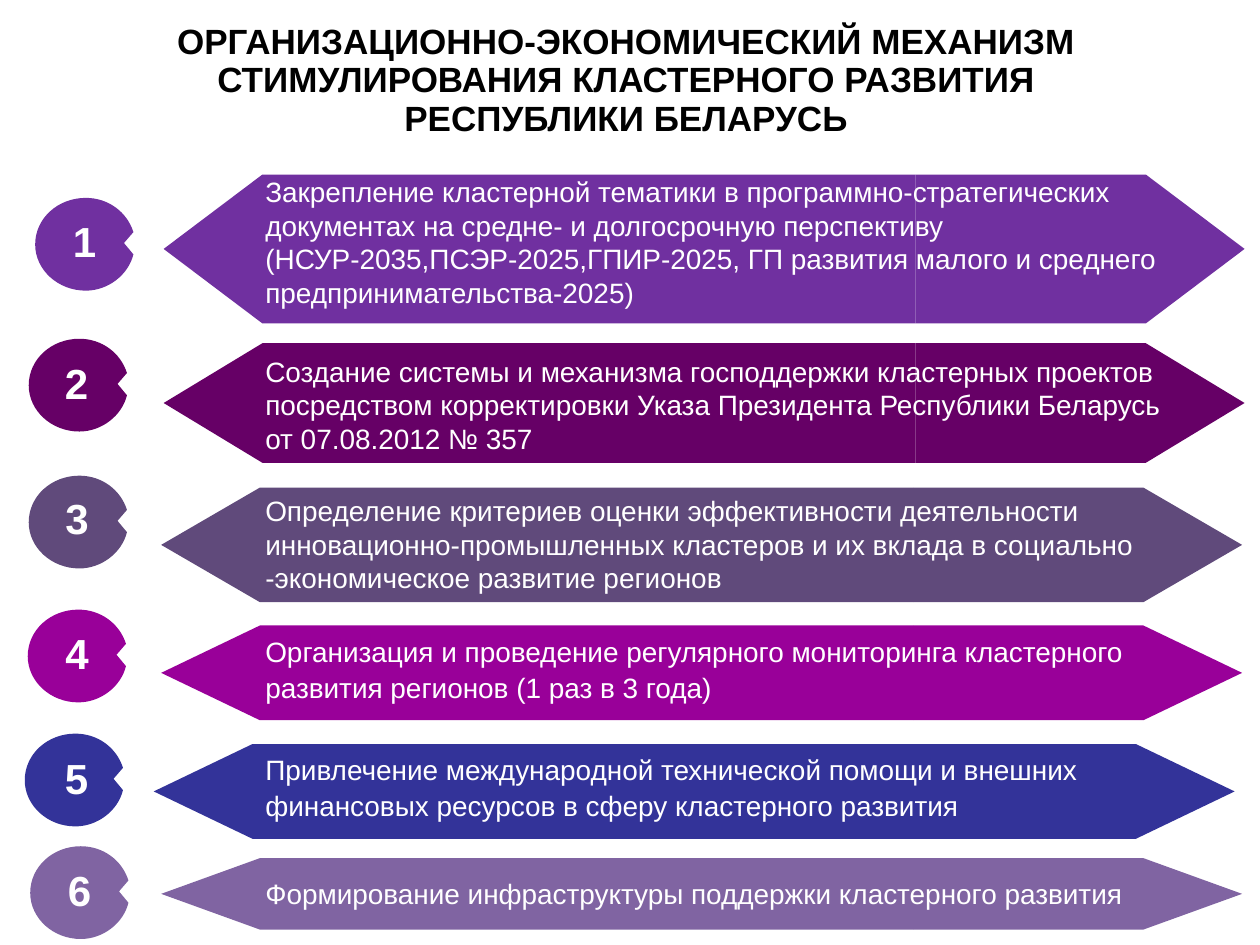
from dataclasses import dataclass

from lxml.etree import SubElement
from pptx import Presentation
from pptx.dml.color import RGBColor
from pptx.enum.text import MSO_ANCHOR, MSO_AUTO_SIZE, PP_ALIGN
from pptx.oxml.ns import qn
from pptx.shapes.autoshape import Shape
from pptx.shapes.shapetree import GroupShapes, SlideShapes
from pptx.slide import Slide
from pptx.text.text import TextFrame
from pptx.util import Cm, Pt

Point = tuple[float, float]


@dataclass(frozen=True)
class Theme:
    """Colours, font and type sizes of the slide."""

    font: str = "Arial"
    ink: str = "000000"
    paper: str = "FFFFFF"
    title_size: int = 20
    measure_size: int = 16
    number_size: int = 24
    title_leading: int = 22


@dataclass(frozen=True)
class Box:
    """A rectangle in centimetres."""

    left: float
    top: float
    width: float
    height: float


@dataclass(frozen=True)
class Measure:
    """One numbered measure: wording, colour and positions in centimetres."""

    wording: str
    colour: str
    band: Box
    wording_box: Box
    badge: Point
    number: Point
    spaced: bool = False


THEME = Theme()
BAND_WIDTH = 21.79
SEAM = 15.16
TIP = 1.99
WORDING_LEFT = 5.1
BADGE_START: Point = (1.98, 0.69)
BADGE_NOTCH: Point = (1.79, 0.91)
BADGE_CURVES: tuple[tuple[Point, Point, Point], ...] = (
    ((1.85, 0.28), (1.47, 0), (1.02, 0)),
    ((0.46, 0), (0, 0.41), (0, 0.94)),
    ((0, 1.45), (0.46, 1.87), (1.02, 1.87)),
    ((1.47, 1.87), (1.88, 1.55), (1.98, 1.14)),
    (BADGE_NOTCH, BADGE_NOTCH, BADGE_NOTCH),
)

TITLE = (
    "ОРГАНИЗАЦИОННО-ЭКОНОМИЧЕСКИЙ МЕХАНИЗМ СТИМУЛИРОВАНИЯ КЛАСТЕРНОГО РАЗВИТИЯ",
    "РЕСПУБЛИКИ БЕЛАРУСЬ",
)
MEASURES = (
    Measure(
        "Закрепление кластерной тематики в программно-стратегических документах на средне- и "
        "долгосрочную перспективу (НСУР-2035,ПСЭР-2025,ГПИР-2025, ГП развития малого и среднего "
        "предпринимательства-2025)",
        "7030A0", Box(3.3, 3.52, BAND_WIDTH, 3), Box(WORDING_LEFT, 3.4, 18.59, 3), (0.71, 3.99), (1.22, 4.22),
    ),
    Measure(
        "Создание системы и механизма господдержки кластерных проектов посредством корректировки "
        "Указа Президента Республики Беларусь от 07.08.2012 № 357",
        "660066", Box(3.3, 6.92, BAND_WIDTH, 2.41), Box(WORDING_LEFT, 7.02, 18.95, 3.07), (0.58, 6.83), (1.06, 7.09),
    ),
    Measure(
        "Определение критериев оценки эффективности деятельности инновационно-промышленных "
        "кластеров и их вклада в социально -экономическое развитие регионов",
        "604A7B", Box(3.25, 9.83, BAND_WIDTH, 2.31), Box(WORDING_LEFT, 9.83, 19.38, 2.31), (0.58, 9.59), (1.07, 9.8),
    ),
    Measure(
        "Организация и проведение регулярного мониторинга кластерного развития регионов (1 раз в 3 года)",
        "990099", Box(3.25, 12.61, BAND_WIDTH, 1.91), Box(WORDING_LEFT, 12.63, 19.38, 1.68), (0.56, 12.29),
        (1.07, 12.52), spaced=True,
    ),
    Measure(
        "Привлечение международной технической помощи и внешних финансовых ресурсов в сферу "
        "кластерного развития",
        "333399", Box(3.1, 15, BAND_WIDTH, 1.91), Box(WORDING_LEFT, 15, 19.38, 1.68), (0.5, 14.79),
        (1.06, 15.04), spaced=True,
    ),
    Measure(
        "Формирование инфраструктуры поддержки кластерного развития",
        "8064A2", Box(3.25, 17.3, BAND_WIDTH, 1.44), Box(WORDING_LEFT, 17.55, 18.95, 0.94), (0.61, 17.06), (1.12, 17.31),
    ),
)


def draw_outline(shapes: SlideShapes | GroupShapes, points: list[Point], colour: str) -> Shape:
    """Draw a closed, filled outline through points given in centimetres."""
    corners = [(Cm(x), Cm(y)) for x, y in points]
    builder = shapes.build_freeform(*corners[0])
    builder.add_line_segments([*corners[1:], corners[0]], close=True)
    outline = builder.convert_to_shape()
    outline.fill.solid()
    outline.fill.fore_color.rgb = RGBColor.from_string(colour)
    outline.line.fill.background()
    outline.shadow.inherit = False
    return outline


def draw_band(slide: Slide, measure: Measure) -> None:
    """Draw a double-headed band as two grouped halves that meet at the seam."""
    band = measure.band
    halves = slide.shapes.add_group_shape().shapes
    bottom, middle = band.top + band.height, band.top + band.height / 2
    seam, right = band.left + SEAM, band.left + band.width
    for tip, shoulder in ((band.left, band.left + TIP), (right, right - TIP)):
        points = [(shoulder, band.top), (tip, middle), (shoulder, bottom), (seam, bottom), (seam, band.top)]
        draw_outline(halves, points, measure.colour)


def draw_badge(slide: Slide, measure: Measure) -> None:
    """Draw a round badge with a notch, bending its sides into cubic curves."""
    left, top = measure.badge
    ends = [BADGE_START, *(curve[-1] for curve in BADGE_CURVES)]
    badge = draw_outline(slide.shapes, [(left + x, top + y) for x, y in ends], measure.colour)
    sides = list(badge.element.iter(qn("a:lnTo")))
    for side, curve in zip(sides, BADGE_CURVES):
        bend = side.getparent().makeelement(qn("a:cubicBezTo"))
        for x, y in curve:
            SubElement(bend, qn("a:pt"), x=str(int(Cm(x))), y=str(int(Cm(y))))
        side.getparent().replace(side, bend)


def write(
    slide: Slide, box: Box, lines: tuple[str, ...], size: int, colour: str, bold: bool = False
) -> TextFrame:
    """Write lines in a wrapping text box and return its text frame."""
    frame = slide.shapes.add_textbox(Cm(box.left), Cm(box.top), Cm(box.width), Cm(box.height)).text_frame
    frame.word_wrap = True
    frame.auto_size = MSO_AUTO_SIZE.SHAPE_TO_FIT_TEXT
    frame.text = "\n".join(lines)
    for paragraph in frame.paragraphs:
        paragraph.font.name = THEME.font
        paragraph.font.size = Pt(size)
        paragraph.font.bold = bold
        paragraph.font.color.rgb = RGBColor.from_string(colour)
    return frame


def write_title(slide: Slide) -> None:
    """Write the centred heading."""
    title = write(slide, Box(1.19, 0.31, 22.86, 2.62), TITLE, THEME.title_size, THEME.ink, bold=True)
    title.auto_size = MSO_AUTO_SIZE.NONE
    title.vertical_anchor = MSO_ANCHOR.MIDDLE
    for line in title.paragraphs:
        line.alignment = PP_ALIGN.CENTER
        line.line_spacing = Pt(THEME.title_leading)


def write_measure(slide: Slide, measure: Measure) -> None:
    """Write the wording of one measure over its band."""
    wording = write(slide, measure.wording_box, (measure.wording,), THEME.measure_size, THEME.paper)
    if measure.spaced:
        wording.paragraphs[0].line_spacing = 1.07
        wording.paragraphs[0].space_after = Pt(8)


def main() -> None:
    """Build the slide and save it."""
    deck = Presentation()
    deck.slide_width, deck.slide_height = Cm(25.4), Cm(19.05)
    slide = deck.slides.add_slide(deck.slide_layouts[6])
    write_title(slide)
    for draw_layer in (draw_band, write_measure, draw_badge):
        for measure in MEASURES:
            draw_layer(slide, measure)
    for number, measure in enumerate(MEASURES, start=1):
        write(slide, Box(*measure.number, 1.88, 1.28), (str(number),), THEME.number_size, THEME.paper, bold=True)
    deck.save("out.pptx")


if __name__ == "__main__":
    main()
